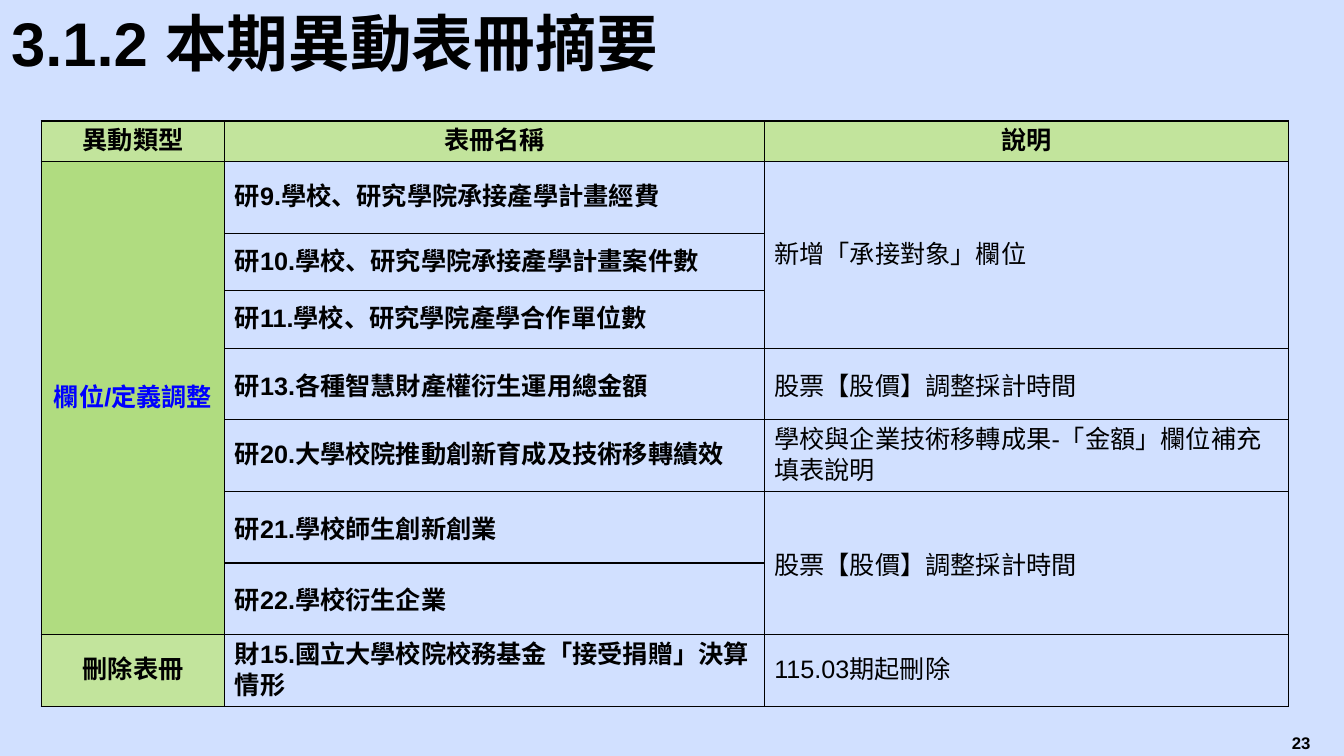
from pptx import Presentation
from pptx.dml.color import RGBColor
from pptx.enum.text import MSO_ANCHOR as Anchor, MSO_AUTO_SIZE as AutoSize, PP_ALIGN as Align
from pptx.oxml.ns import qn
from pptx.util import Inches, Pt
from lxml.etree import SubElement

COLORS = {
    "background": "D1E0FF",
    "text": "000000",
    "accent": "0000FF",
    "light_green": "C2E49C",
    "green": "B0DC80",
}

COLUMN_WIDTHS = [1.82, 5.35, 5.2]
ROW_HEIGHTS = [0.4, 0.71, 0.57, 0.57] + [0.71] * 5
HEADINGS = ["異動類型", "表冊名稱", "說明"]
# Change type, first row, last row, fill, text colour
CHANGE_TYPES = [
    ("欄位/定義調整", 1, 7, "green", "accent"),
    ("刪除表冊", 8, 8, "light_green", "text"),
]
FORMS = [
    "研9.學校、研究學院承接產學計畫經費",
    "研10.學校、研究學院承接產學計畫案件數",
    "研11.學校、研究學院產學合作單位數",
    "研13.各種智慧財產權衍生運用總金額",
    "研20.大學校院推動創新育成及技術移轉績效",
    "研21.學校師生創新創業",
    "研22.學校衍生企業",
    "財15.國立大學校院校務基金「接受捐贈」決算情形",
]
# Explanation, first row, last row
EXPLANATIONS = [
    ("新增「承接對象」欄位", 1, 3),
    ("股票【股價】調整採計時間", 4, 4),
    ("學校與企業技術移轉成果-「金額」欄位補充填表說明", 5, 5),
    ("股票【股價】調整採計時間", 6, 7),
    ("115.03期起刪除", 8, 8),
]
SINGLE_SPACED_ROWS = {4, 6, 7}


class SlideBuilder:
    font_name = "Arial"

    def __init__(self, slide):
        self.slide = slide
        background = slide.background.fill
        background.solid()
        background.fore_color.rgb = self.color("background")

    def color(self, name):
        return RGBColor.from_string(COLORS[name])

    def set_text(self, frame, text, size, bold=True, color="text", align=Align.LEFT, spacing=None):
        frame.text = text
        paragraph = frame.paragraphs[0]
        paragraph.alignment = align
        paragraph.line_spacing = spacing
        font = paragraph.runs[0].font
        font.name, font.size, font.bold = self.font_name, Pt(size), bold
        font.color.rgb = self.color(color)

    def title(self, text, left, top, width, height):
        heading = self.slide.shapes.title
        heading.left, heading.top = Inches(left), Inches(top)
        heading.width, heading.height = Inches(width), Inches(height)
        frame = heading.text_frame
        frame.auto_size = AutoSize.NONE
        frame.vertical_anchor = Anchor.MIDDLE
        self.set_text(frame, text, 44, spacing=0.9)

    def label(self, text, left, top, width, height):
        box = self.slide.shapes.add_textbox(Inches(left), Inches(top), Inches(width), Inches(height))
        box.text_frame.word_wrap = True
        self.set_text(box.text_frame, text, 12, align=Align.CENTER)

    def table(self, left, top, widths, heights):
        frame = self.slide.shapes.add_table(
            len(heights), len(widths), Inches(left), Inches(top),
            Inches(sum(widths)), Inches(sum(heights)))
        grid = frame.table
        grid.first_row = grid.horz_banding = False
        for column, width in zip(grid.columns, widths):
            column.width = Inches(width)
        for row, height in zip(grid.rows, heights):
            row.height = Inches(height)
        for cell in grid.iter_cells():
            self.border(cell)
            cell.fill.background()
        return grid

    def border(self, cell):
        properties = cell._tc.get_or_add_tcPr()
        for side in ("a:lnL", "a:lnR", "a:lnT", "a:lnB"):
            line = SubElement(properties, qn(side), w=str(Pt(1)))
            solid = SubElement(line, qn("a:solidFill"))
            SubElement(solid, qn("a:srgbClr"), val=COLORS["text"])

    def cell(self, grid, column, first, last, text, fill=None, **style):
        cell = grid.cell(first, column)
        if last > first:
            cell.merge(grid.cell(last, column))
        cell.vertical_anchor = Anchor.MIDDLE
        if fill:
            cell.fill.solid()
            cell.fill.fore_color.rgb = self.color(fill)
        single = column > 0 and first in SINGLE_SPACED_ROWS
        self.set_text(cell.text_frame, text, 18, spacing=None if single else Pt(22), **style)


def main():
    deck = Presentation()
    deck.slide_width, deck.slide_height = Inches(13.33), Inches(7.5)
    page = SlideBuilder(deck.slides.add_slide(deck.slide_layouts[5]))

    # Title and page number
    page.title("3.1.2 本期異動表冊摘要", 0.01, 0.13, 8.79, 0.67)
    page.label("23", 12.48, 7.22, 0.85, 0.28)

    # Summary of changed forms
    summary = page.table(0.41, 1.2, COLUMN_WIDTHS, ROW_HEIGHTS)
    for column, heading in enumerate(HEADINGS):
        page.cell(summary, column, 0, 0, heading, "light_green", align=Align.CENTER)
    for change, first, last, fill, color in CHANGE_TYPES:
        page.cell(summary, 0, first, last, change, fill, color=color, align=Align.CENTER)
    for row, form in enumerate(FORMS, start=1):
        page.cell(summary, 1, row, row, form)
    for explanation, first, last in EXPLANATIONS:
        page.cell(summary, 2, first, last, explanation, bold=False)

    deck.save("out.pptx")


if __name__ == "__main__":
    main()
